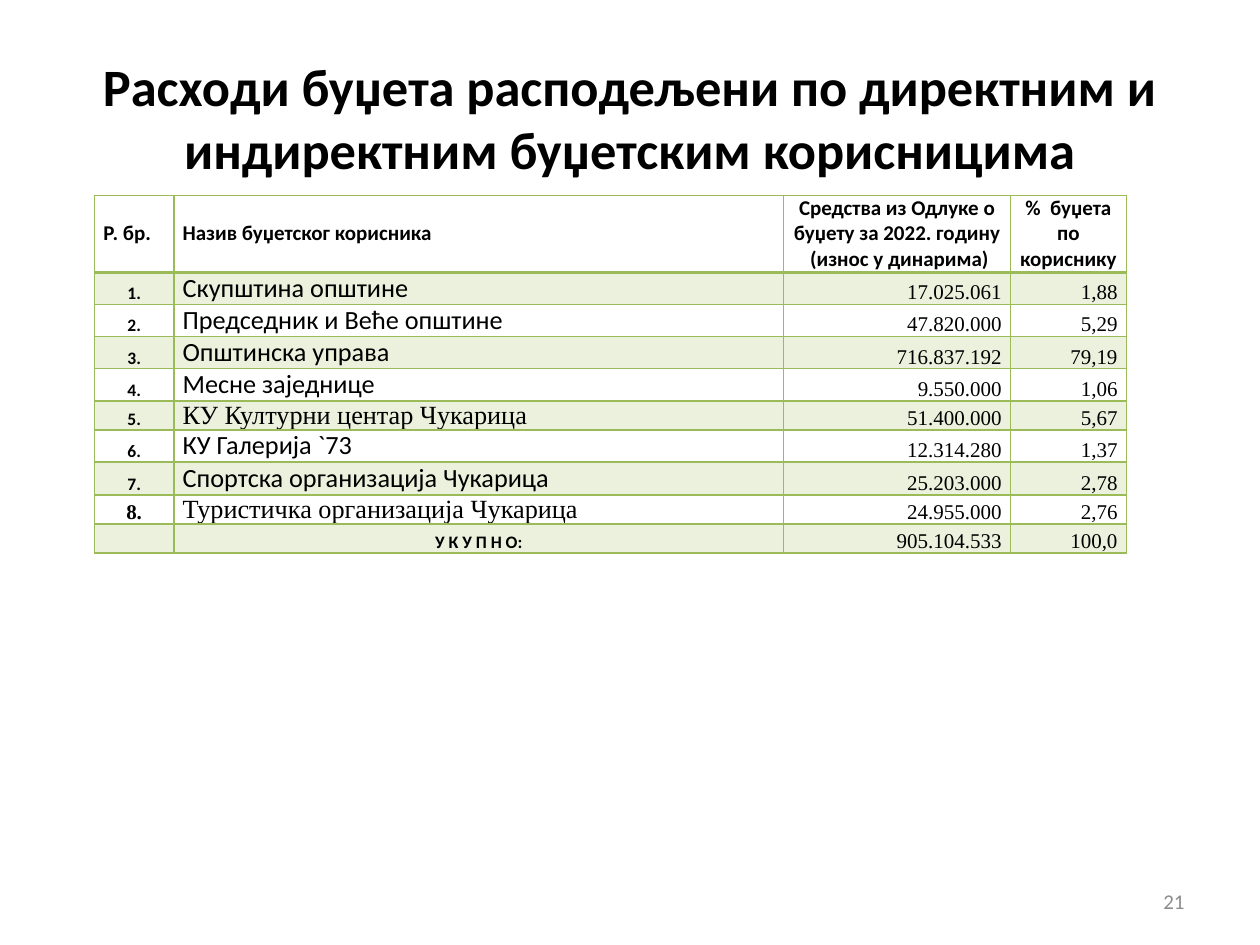
"""Build the slide with budget expenditure by direct and indirect budget users."""
from lxml.etree import SubElement
from pptx import Presentation
from pptx.dml.color import RGBColor
from pptx.enum.text import MSO_ANCHOR as MA, PP_ALIGN as PA
from pptx.oxml import parse_xml
from pptx.oxml.ns import nsdecls, qn
from pptx.util import Inches, Pt

BLACK = RGBColor(0x00, 0x00, 0x00)
GREEN = RGBColor(0x9B, 0xBB, 0x59)
GREY = RGBColor(0x8C, 0x8C, 0x8C)
SANS, SERIF = "Calibri", "Times New Roman"

HEADER = ["Р. бр.", "Назив буџетског корисника",
          "Средства из Одлуке о буџету за 2022. годину  (износ у динарима)",
          "%  буџета по кориснику"]
USERS = [
    ("1.", "Скупштина општине", "17.025.061", "1,88"),
    ("2.", "Председник и Веће општине", "47.820.000", "5,29"),
    ("3.", "Општинска управа", "716.837.192", "79,19"),
    ("4.", "Месне заједнице", "9.550.000", "1,06"),
    ("5.", "КУ Културни центар Чукарица", "51.400.000", "5,67"),
    ("6.", "КУ Галерија `73", "12.314.280", "1,37"),
    ("7.", "Спортска организација Чукарица", "25.203.000", "2,78"),
    ("8.", "Туристичка организација Чукарица", "24.955.000", "2,76"),
    ("", "У К У П Н О:", "905.104.533", "100,0"),
]
COLS = [0.63, 4.84, 1.8, 0.92]
ROWS = [0.6, 0.23, 0.25, 0.23, 0.23, 0.23, 0.04, 0.26, 0.23, 0.23]
HEAD_ALIGN = [PA.LEFT, PA.LEFT, PA.CENTER, PA.CENTER]
NUMBER = dict(size=Pt(10), name=SANS, bold=True)
NAME = dict(size=Pt(15), name=SANS, bold=False)
AMOUNT = dict(size=Pt(12), name=SERIF, bold=False)
BODY = [(PA.CENTER, NUMBER), (PA.LEFT, NAME), (PA.RIGHT, AMOUNT), (PA.RIGHT, AMOUNT)]
SPECIAL = {
    (5, 1): (PA.LEFT, NAME | {"name": SERIF}),
    (8, 0): (PA.CENTER, AMOUNT | {"bold": True}),
    (8, 1): (PA.LEFT, NAME | {"name": SERIF}),
    (9, 1): (PA.CENTER, NUMBER),
}


def write(tf, text, align, color, fmt):
    p = tf.paragraphs[0]
    p.alignment = align
    if not text:
        SubElement(p._p, qn("a:endParaRPr"), sz=str(int(fmt["size"].pt * 100)))
        return
    r = p.add_run()
    r.text = text
    r.font.color.rgb = color
    for key, value in fmt.items():
        setattr(r.font, key, value)


def add_borders(cell, widths):
    for i, (side, width) in enumerate(widths.items()):
        cell._tc.get_or_add_tcPr().insert(i, parse_xml(
            f'<a:{side} {nsdecls("a")} w="{Pt(width)}"><a:solidFill>'
            f'<a:srgbClr val="{GREEN}"/></a:solidFill></a:{side}>'))


prs = Presentation()
prs.slide_width, prs.slide_height = Inches(10), Inches(7.5)
s = prs.slides.add_slide(prs.slide_layouts[5])

title = s.shapes.title
title.left, title.top, title.width, title.height = map(Inches, (0.5, 0.3, 9, 1.25))
title.text_frame.vertical_anchor = MA.MIDDLE
write(title.text_frame, "Расходи буџета расподељени по директним и индиректним буџетским корисницима",
      PA.CENTER, BLACK, dict(size=Pt(30), name=SANS, bold=True))

table = s.shapes.add_table(len(ROWS), len(COLS), Inches(0.75), Inches(1.55),
                           Inches(sum(COLS)), Inches(sum(ROWS))).table
table.first_row = table.horz_banding = False
for col, width in zip(table.columns, COLS):
    col.width = Inches(width)
for row, height in zip(table.rows, ROWS):
    row.height = Inches(height)

for i, texts in enumerate([HEADER, *USERS]):
    for j, text in enumerate(texts):
        cell = table.cell(i, j)
        cell.margin_left = cell.margin_right = Inches(0.07)
        cell.margin_top = cell.margin_bottom = 0
        cell.vertical_anchor = MA.BOTTOM if i else MA.MIDDLE
        if i % 2:
            cell.fill.solid()
            cell.fill.fore_color.rgb = GREEN
            color = cell._tc.tcPr.find(".//" + qn("a:srgbClr"))
            SubElement(color, qn("a:alpha"), val="20000")
        else:
            cell.fill.background()
        add_borders(cell, {"lnL": 1, "lnR": 1, "lnT": 2 if i == 1 else 1,
                           "lnB": 1 if i else 2})
        align, fmt = SPECIAL.get((i, j), BODY[j])
        if i == 0:
            align, fmt = HEAD_ALIGN[j], NUMBER | {"size": Pt(12)}
        write(cell.text_frame, text, align, BLACK, fmt)

sp = s.shapes.add_textbox(Inches(7.17), Inches(6.95), Inches(2.33), Inches(0.4))
sp.text_frame.word_wrap = True
sp.text_frame.vertical_anchor = MA.MIDDLE
write(sp.text_frame, "21", PA.RIGHT, GREY, dict(size=Pt(12), name=SANS))

prs.save("out.pptx")
